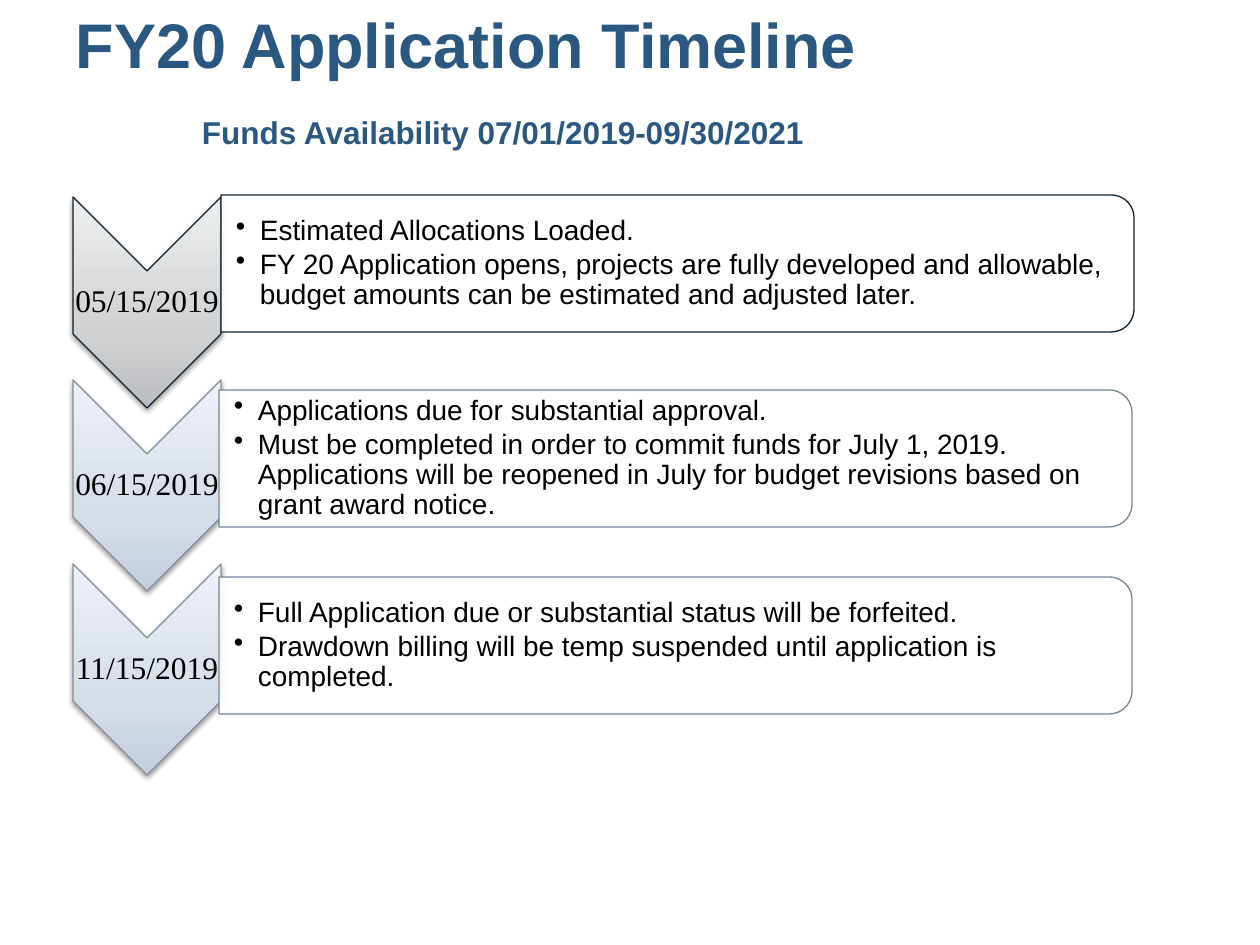
from dataclasses import dataclass
from lxml import etree
from pptx import Presentation, util as u
from pptx.dml.color import RGBColor
from pptx.enum import shapes, text
from pptx.oxml import parse_xml
from pptx.oxml.ns import nsdecls, qn

PX = u.Inches(1) / 126


@dataclass(frozen=True)
class Theme:
    sans: str = "Arial"
    serif: str = "Times New Roman"
    title: str = "2B5880"
    ink: str = "000000"
    panel: str = "FFFFFF"
    head: int = 36
    sub: int = 18
    date: int = 18
    body: int = 16
    line: float = 0.75


@dataclass(frozen=True)
class Tone:
    stops: tuple  # (position, colour), from the bottom up
    edge: str
    frame: str


T = Theme()
GREY = Tone(((0, "BBBDC0"), (35, "D0D1D3"), (100, "EDEEEE")), "10212F", "10212F")
BLUE = Tone(((0, "C3CFE0"), (35, "D5DDE8"), (100, "EEF2F7")), "818FA0", "758497")

# Chevron top, panel left, panel top, tone, date, bullet points
STEPS = [
    (197, 221, 195, GREY, "05/15/2019", [
        "Estimated Allocations Loaded.",
        "FY 20 Application opens, projects are fully developed and allowable, "
        "budget amounts can be estimated and adjusted later."]),
    (380, 219, 390, BLUE, "06/15/2019", [
        "Applications due for substantial approval.",
        "Must be completed in order to commit funds for July 1, 2019. "
        "Applications will be reopened in July for budget revisions based on "
        "grant award notice."]),
    (564, 219, 577, BLUE, "11/15/2019", [
        "Full Application due or substantial status will be forfeited.",
        "Drawdown billing will be temp suspended until application is completed."]),
]


def px(n):
    return u.Emu(round(n * PX))


def add_run(para, words, size, face, color, bold=False):
    run = para.add_run()
    run.text = words
    font = run.font
    font.size, font.name, font.bold = u.Pt(size), face, bold
    font.color.rgb = RGBColor.from_string(color)


def inset(frame, left, top, right, bottom):
    frame.margin_left, frame.margin_top = px(left), px(top)
    frame.margin_right, frame.margin_bottom = px(right), px(bottom)
    frame.vertical_anchor = text.MSO_ANCHOR.MIDDLE
    frame.auto_size = text.MSO_AUTO_SIZE.NONE


def add_text(slide, x, y, w, h, left=1):
    frame = slide.shapes.add_textbox(px(x), px(y), px(w), px(h)).text_frame
    inset(frame, left, 1, 1, 1)
    frame.word_wrap = True
    return frame


def add_turned(slide, kind, x, y, w, h, edge):
    """Add a shape turned by 90 degrees that covers the given box."""
    left, top = x + (w - h) / 2, y + (h - w) / 2
    shape = slide.shapes.add_shape(kind, px(left), px(top), px(h), px(w))
    shape.rotation = 90
    shape.shadow.inherit = False
    shape.line.color.rgb = RGBColor.from_string(edge)
    shape.line.width = u.Pt(T.line)
    return shape


def shade(shape, stops):
    """Give a shape an upright gradient and a soft shadow below."""
    shape.fill.gradient()
    props = shape.fill._xPr
    marks = "".join(f'<a:gs pos="{pos * 1000}"><a:srgbClr val="{color}"/></a:gs>'
                    for pos, color in stops)
    props.replace(props.find(qn("a:gradFill")), parse_xml(
        f'<a:gradFill {nsdecls("a")} rotWithShape="0"><a:gsLst>{marks}</a:gsLst>'
        '<a:lin ang="16200000" scaled="0"/></a:gradFill>'))
    props.find(qn("a:effectLst")).append(parse_xml(
        f'<a:outerShdw {nsdecls("a")} blurRad="40000" dist="20000" dir="5400000" '
        'rotWithShape="0"><a:srgbClr val="000000"><a:alpha val="38000"/>'
        '</a:srgbClr></a:outerShdw>'))


def add_title(slide, x, y, w, h):
    title = slide.shapes.title
    title.left, title.top, title.width, title.height = map(px, (x, y, w, h))
    frame = title.text_frame
    inset(frame, 13, 0, 13, 77)
    head, sub = frame.paragraphs[0], frame.add_paragraph()
    for para in (head, sub):
        para.alignment = text.PP_ALIGN.LEFT
    add_run(head, "FY20 Application Timeline", T.head, T.sans, T.title, True)
    sub.space_before = u.Pt(18)
    sub._p.get_or_add_pPr().set("marL", str(px(126)))
    add_run(sub, "Funds Availability 07/01/2019-09/30/2021", T.sub, T.sans, T.title, True)


def add_date(slide, x, y, w, h, tone, date):
    arrow = add_turned(slide, shapes.MSO_SHAPE.CHEVRON, x, y, w, h, tone.edge)
    shade(arrow, tone.stops)
    para = add_text(slide, x, y + w // 2, w, h - w).paragraphs[0]
    para.alignment = text.PP_ALIGN.CENTER
    para.line_spacing = 0.9
    add_run(para, date, T.date, T.serif, T.ink)


def add_panel(slide, x, y, w, h, tone, points):
    kind = shapes.MSO_SHAPE.ROUND_2_SAME_RECTANGLE
    panel = add_turned(slide, kind, x, y, w, h, tone.frame)
    panel.fill.solid()
    panel.fill.fore_color.rgb = RGBColor.from_string(T.panel)
    color = panel.fill._xPr.find(qn("a:solidFill"))[0]
    etree.SubElement(color, qn("a:alpha")).set("val", "90000")

    frame = add_text(slide, x, y + 7, w - 7, h - 14, left=15)
    for i, point in enumerate(points):
        para = frame.add_paragraph() if i else frame.paragraphs[0]
        props = para._p.get_or_add_pPr()
        props.set("marL", str(px(24)))
        props.set("indent", str(-px(24)))
        etree.SubElement(props, qn("a:buChar")).set("char", "•")
        para.line_spacing = 0.9
        para.space_after = u.Pt(2.4)
        add_run(para, point, T.body, T.sans, T.ink)


def main():
    deck = Presentation()
    deck.slide_width, deck.slide_height = px(1260), px(945)
    slide = deck.slides.add_slide(deck.slide_layouts[5])
    add_title(slide, 63, 38, 1134, 157)
    for top, left, y, tone, date, points in STEPS:
        add_date(slide, 73, top, 148, 211, tone, date)
        add_panel(slide, left, y, 913, 137, tone, points)
    deck.save("out.pptx")


if __name__ == "__main__":
    main()
